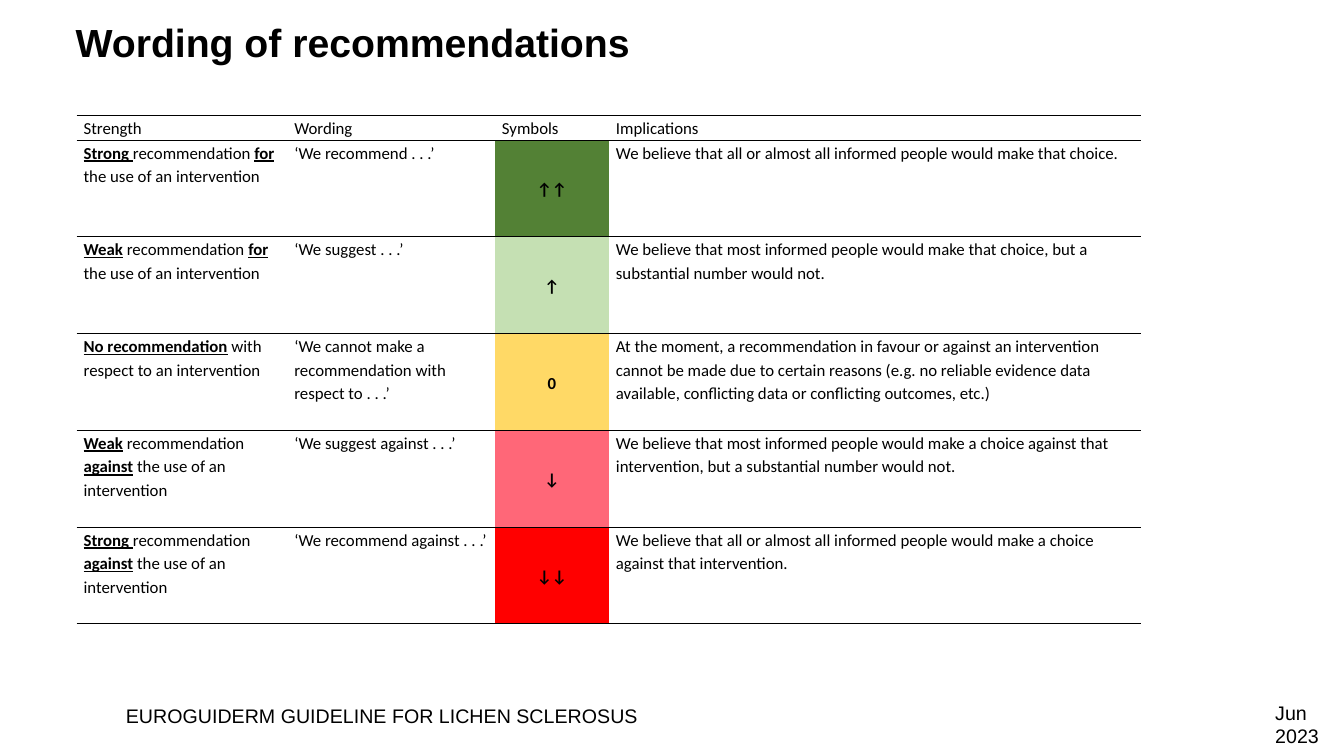
from dataclasses import dataclass

from lxml import etree
from pptx import Presentation, util as u
from pptx.dml.color import RGBColor
from pptx.enum import text
from pptx.oxml.ns import qn

COLOURS = {
    "ink": "000000",
    "strong_for": "538135",
    "weak_for": "C5E0B3",
    "none": "FFD966",
    "weak_against": "FF6778",
    "strong_against": "FF0000",
}
SLIDE_W, SLIDE_H = u.Inches(13.33), u.Inches(7.5)
COLUMNS = (15.68, 15.45, 8.48, 39.6)  # percent of slide width
HEADER_ROW, BODY_ROW = 3.2, 12.8  # percent of slide height
SYMBOL_COLUMN = 2
THICK, THIN = 1, 0.5  # points
RULES = (THICK, THIN, THICK, THIN, THIN, THIN, THICK)  # from top to bottom


@dataclass(frozen=True)
class Box:
    """Position and size in percent of the slide."""
    left: float
    top: float
    width: float
    height: float

    def emu(self) -> tuple[int, int, int, int]:
        return (across(self.left), down(self.top),
                across(self.width), down(self.height))


@dataclass(frozen=True)
class Footer:
    box: Box
    lines: tuple[str, ...]


@dataclass(frozen=True)
class Recommendation:
    strength: str  # asterisks enclose bold underlined words
    wording: str
    symbol: str
    implications: str
    colour: str

    def cells(self) -> tuple[str, ...]:
        return self.strength, self.wording, self.symbol, self.implications


TITLE_BOX = Box(4.88, 1.73, 90.02, 7.73)
TABLE_BOX = Box(5.7, 15.33, sum(COLUMNS), HEADER_ROW + 5 * BODY_ROW)
FOOTERS = (
    Footer(Box(8.63, 92.4, 41.33, 4.53),
           ("EUROGUIDERM GUIDELINE FOR LICHEN SCLEROSUS",)),
    Footer(Box(94.15, 92, 5.93, 7.6), ("Jun", "2023")),
)
HEADINGS = ("Strength", "Wording", "Symbols", "Implications")
RECOMMENDATIONS = (
    Recommendation(
        "*Strong *recommendation *for*\nthe use of an intervention",
        "‘We recommend . . .’", "↑↑",
        "We believe that all or almost all informed people would make that "
        "choice.", "strong_for"),
    Recommendation(
        "*Weak* recommendation *for*\nthe use of an intervention",
        "‘We suggest . . .’", "↑",
        "We believe that most informed people would make that choice, but a "
        "substantial number would not.", "weak_for"),
    Recommendation(
        "*No recommendation* with respect to an intervention",
        "‘We cannot make a recommendation with respect to . . .’", "0",
        "At the moment, a recommendation in favour or against an intervention "
        "cannot be made due to certain reasons (e.g. no reliable evidence data "
        "available, conflicting data or conflicting outcomes, etc.)", "none"),
    Recommendation(
        "*Weak* recommendation *against* the use of an intervention",
        "‘We suggest against . . .’", "↓",
        "We believe that most informed people would make a choice against that "
        "intervention, but a substantial number would not.", "weak_against"),
    Recommendation(
        "*Strong *recommendation *against* the use of an intervention",
        "‘We recommend against . . .’", "↓↓",
        "We believe that all or almost all informed people would make a choice "
        "against that intervention.", "strong_against"),
)


def across(percent: float) -> int:
    return round(SLIDE_W * percent / 100)


def down(percent: float) -> int:
    return round(SLIDE_H * percent / 100)


def set_font(paragraph, name: str, size: float) -> None:
    paragraph.font.name = name
    paragraph.font.size = u.Pt(size)
    paragraph.font.color.rgb = RGBColor.from_string(COLOURS["ink"])


def add_title(slide, wording: str) -> None:
    title = slide.shapes.title
    title.left, title.top, title.width, title.height = TITLE_BOX.emu()
    title.text_frame.text = wording
    title.text_frame.vertical_anchor = text.MSO_ANCHOR.MIDDLE
    heading = title.text_frame.paragraphs[0]
    heading.alignment = text.PP_ALIGN.LEFT
    set_font(heading, "Arial", 28)
    heading.font.bold = True


def add_footer(slide, footer: Footer) -> None:
    frame = slide.shapes.add_textbox(*footer.box.emu()).text_frame
    frame.word_wrap = True
    frame.text = "\n".join(footer.lines)
    for paragraph in frame.paragraphs:
        set_font(paragraph, "Arial", 14)


def add_rule(cell, side: str, points: float) -> None:
    rule = etree.SubElement(cell._tc.get_or_add_tcPr(), qn(f"a:{side}"),
                            w=str(u.Pt(points)))
    if points:
        fill = etree.SubElement(rule, qn("a:solidFill"))
        etree.SubElement(fill, qn("a:srgbClr"), val=COLOURS["ink"])
    else:
        etree.SubElement(rule, qn("a:noFill"))


def fill_cell(cell, wording: str, row: int) -> None:
    cell.margin_left = cell.margin_right = u.Inches(0.07)
    cell.margin_top = cell.margin_bottom = 0
    for side, points in (("lnL", 0), ("lnR", 0),
                         ("lnT", RULES[row]), ("lnB", RULES[row + 1])):
        add_rule(cell, side, points)
    cell.fill.background()
    for index, line in enumerate(wording.split("\n")):
        frame = cell.text_frame
        paragraph = frame.add_paragraph() if index else frame.paragraphs[0]
        paragraph.line_spacing = 1.15
        set_font(paragraph, "Calibri", 12)
        for part, words in enumerate(line.split("*")):
            if words:
                run = paragraph.add_run()
                run.text = words
                if part % 2:
                    run.font.bold = run.font.underline = True


def mark_symbol(cell, colour: str) -> None:
    cell.fill.solid()
    cell.fill.fore_color.rgb = RGBColor.from_string(COLOURS[colour])
    cell.vertical_anchor = text.MSO_ANCHOR.MIDDLE
    symbol = cell.text_frame.paragraphs[0]
    symbol.alignment = text.PP_ALIGN.CENTER
    symbol.font.bold = True


def add_recommendations(slide) -> None:
    rows = (HEADINGS, *(item.cells() for item in RECOMMENDATIONS))
    table = slide.shapes.add_table(len(rows), len(COLUMNS),
                                   *TABLE_BOX.emu()).table
    table.first_row = table.horz_banding = False
    for column, width in zip(table.columns, COLUMNS):
        column.width = across(width)
    for row, wordings in enumerate(rows):
        table.rows[row].height = down(BODY_ROW if row else HEADER_ROW)
        for column, wording in enumerate(wordings):
            fill_cell(table.cell(row, column), wording, row)
    for row, item in enumerate(RECOMMENDATIONS, start=1):
        mark_symbol(table.cell(row, SYMBOL_COLUMN), item.colour)


def main() -> None:
    deck = Presentation()
    deck.slide_width, deck.slide_height = SLIDE_W, SLIDE_H
    slide = deck.slides.add_slide(deck.slide_layouts.get_by_name("Title Only"))
    # Footer line and date
    for footer in FOOTERS:
        add_footer(slide, footer)
    # Title and table
    add_title(slide, "Wording of recommendations")
    add_recommendations(slide)
    deck.save("out.pptx")


if __name__ == "__main__":
    main()
